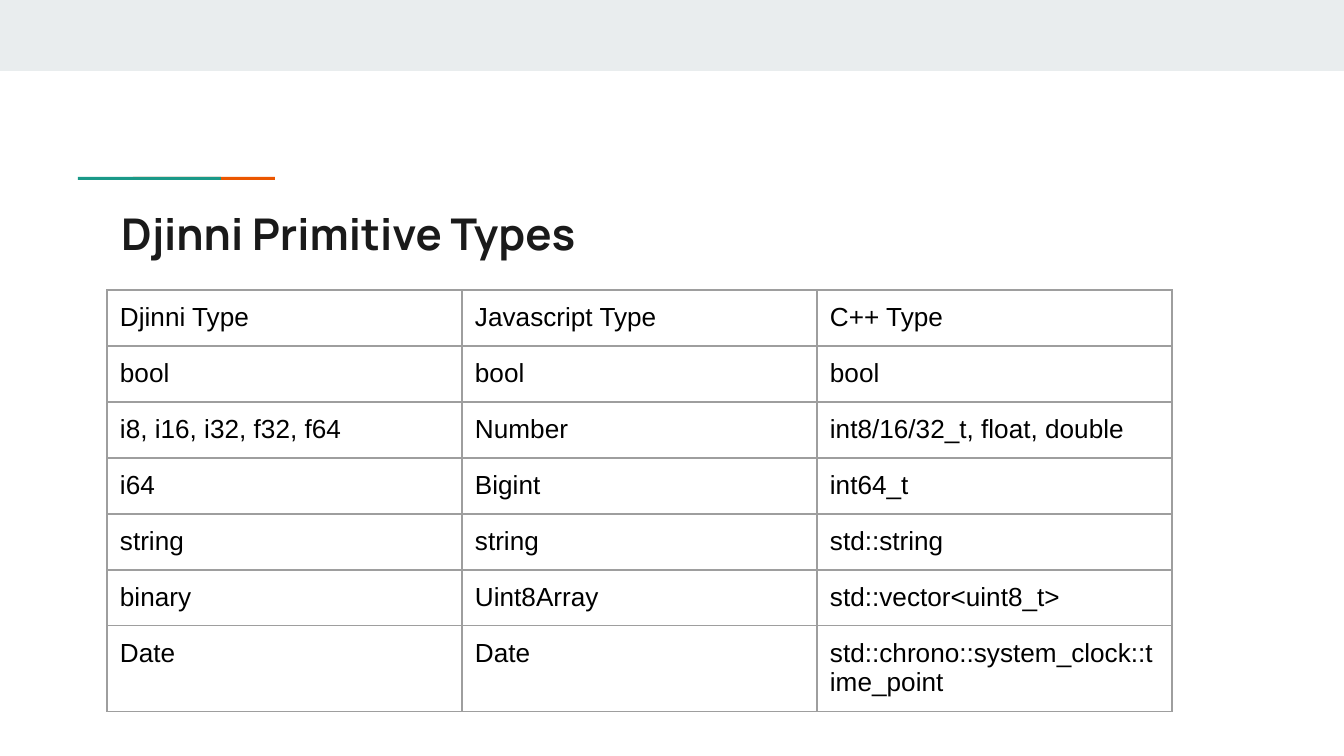
from lxml import etree
from pptx import Presentation
from pptx.dml.color import RGBColor
from pptx.enum.shapes import MSO_SHAPE
from pptx.enum.text import MSO_ANCHOR, PP_ALIGN
from pptx.oxml.ns import qn
from pptx.util import Pt

RECTANGLE = MSO_SHAPE.RECTANGLE
MIDDLE = MSO_ANCHOR.MIDDLE
LEFT = PP_ALIGN.LEFT

PALE_GRAY = RGBColor(0xE9, 0xED, 0xEE)
ORANGE = RGBColor(0xEB, 0x56, 0x00)
TEAL = RGBColor(0x1A, 0x99, 0x88)
INK = RGBColor(0x1A, 0x1A, 0x1A)
BLACK = RGBColor(0x00, 0x00, 0x00)
BORDER_GRAY = RGBColor(0x9E, 0x9E, 0x9E)

EMU_PER_PX = 914400 / 134.4
INSET = 13
COLUMN_WIDTH = 355
ROW_HEIGHT = 56
LAST_ROW_HEIGHT = 86

TYPES = [
    ("Djinni Type", "Javascript Type", "C++ Type"),
    ("bool", "bool", "bool"),
    ("i8, i16, i32, f32, f64", "Number", "int8/16/32_t, float, double"),
    ("i64", "Bigint", "int64_t"),
    ("string", "string", "std::string"),
    ("binary", "Uint8Array", "std::vector<uint8_t>"),
    ("Date", "Date", "std::chrono::system_clock::time_point"),
]


def px(value):
    return round(value * EMU_PER_PX)


def set_border(cell, side, points):
    line = etree.SubElement(cell._tc.get_or_add_tcPr(), qn(f"a:{side}"), w=str(Pt(points)))
    fill = etree.SubElement(line, qn("a:solidFill"))
    etree.SubElement(fill, qn("a:srgbClr"), val=str(BORDER_GRAY))


presentation = Presentation()
presentation.slide_width = px(1344)
presentation.slide_height = px(756)
slide = presentation.slides.add_slide(presentation.slide_layouts[5])

# Top band and the two overlapping accent strokes
for left, top, width, height, color in [
    (0, 0, 1344, 71, PALE_GRAY),
    (133, 177, 142, 3, ORANGE),
    (78, 177, 143, 3, TEAL),
]:
    shape = slide.shapes.add_shape(RECTANGLE, px(left), px(top), px(width), px(height))
    shape.shadow.inherit = False
    shape.fill.solid()
    shape.fill.fore_color.rgb = color
    shape.line.fill.background()

# Title
title = slide.shapes.title
title.left, title.top, title.width, title.height = px(108), px(194), px(1130), px(79)
text_frame = title.text_frame
text_frame.text = "Djinni Primitive Types"
text_frame.word_wrap = True
text_frame.vertical_anchor = MIDDLE
text_frame.margin_left = text_frame.margin_right = px(INSET)
text_frame.margin_top = text_frame.margin_bottom = px(INSET)
paragraph = text_frame.paragraphs[0]
paragraph.alignment = LEFT
paragraph.font.name = "Manrope"
paragraph.font.size = Pt(23.4)
paragraph.font.bold = True
paragraph.font.color.rgb = INK

# Type table
row_count, column_count = len(TYPES), len(TYPES[0])
table = slide.shapes.add_table(
    row_count, column_count, px(107), px(290),
    px(column_count * COLUMN_WIDTH), px((row_count - 1) * ROW_HEIGHT + LAST_ROW_HEIGHT),
).table
table.first_row = False
table.horz_banding = False
for column in table.columns:
    column.width = px(COLUMN_WIDTH)
for row in table.rows:
    row.height = px(ROW_HEIGHT)
table.rows[row_count - 1].height = px(LAST_ROW_HEIGHT)

for row_index, row_texts in enumerate(TYPES):
    for column_index, text in enumerate(row_texts):
        cell = table.cell(row_index, column_index)
        cell.text = text
        cell.margin_left = cell.margin_right = px(INSET)
        cell.margin_top = cell.margin_bottom = px(INSET)
        font = cell.text_frame.paragraphs[0].font
        font.name = "Arial"
        font.size = Pt(14)
        font.bold = False
        font.color.rgb = BLACK
        set_border(cell, "lnL", 0.75)
        set_border(cell, "lnR", 0.75)
        set_border(cell, "lnT", 1.5 if row_index == 1 else 0.75)
        set_border(cell, "lnB", 1.5 if row_index == 0 else 0.75)
        cell.fill.background()

presentation.save("out.pptx")
